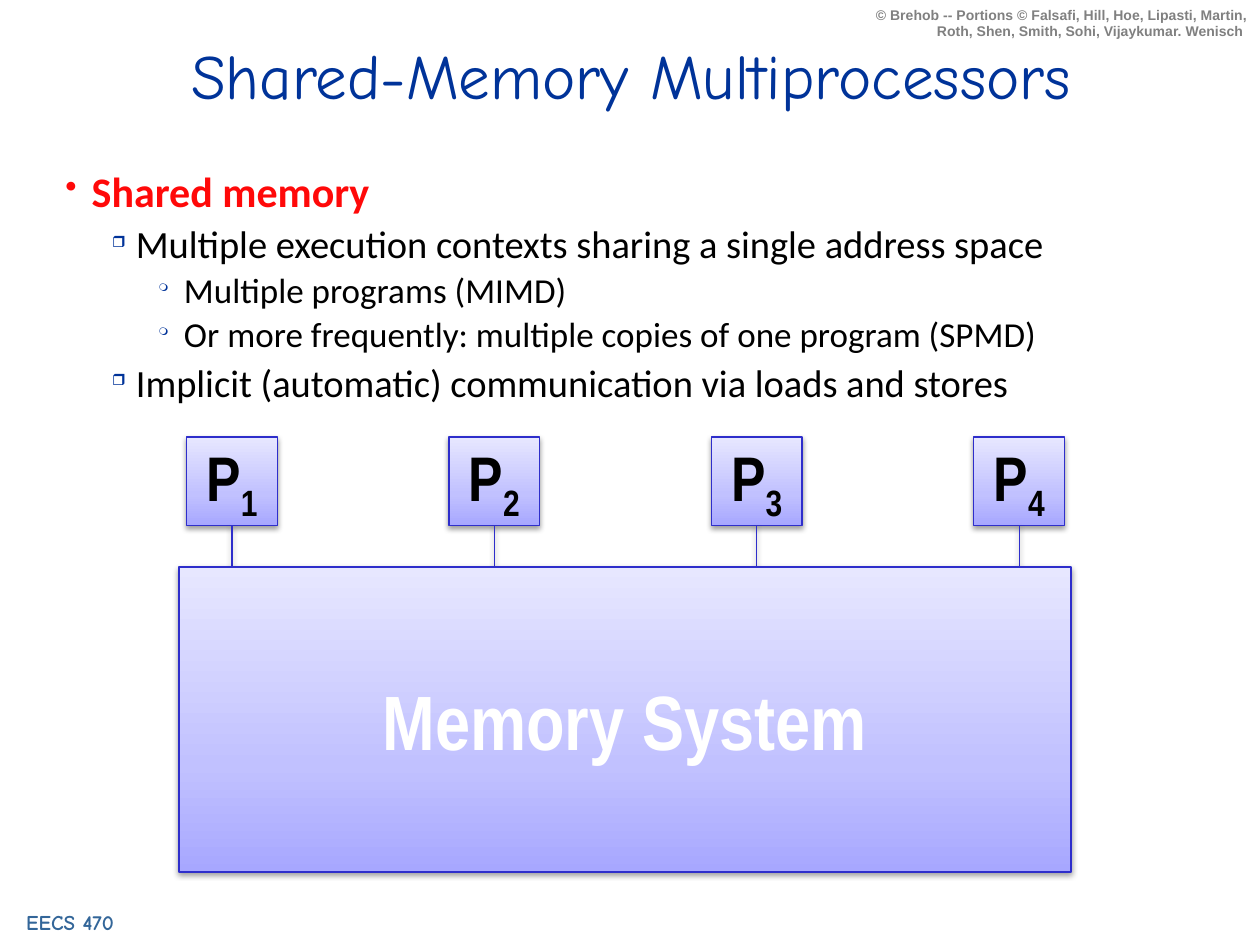
from lxml.etree import SubElement
from pptx import Presentation
from pptx.dml.color import RGBColor
from pptx.enum.shapes import MSO_CONNECTOR, MSO_SHAPE
from pptx.enum.text import MSO_ANCHOR, PP_ALIGN
from pptx.oxml.ns import qn
from pptx.util import Cm, Pt

# Content
TITLE = "Shared-Memory Multiprocessors"
COURSE = "EECS 470 "
CREDIT = ("© Brehob -- Portions © Falsafi, Hill, Hoe, Lipasti, Martin, "
          "Roth, Shen, Smith, Sohi, Vijaykumar. Wenisch ")
POINTS = [
    (0, "Shared memory"),
    (1, "Multiple execution contexts sharing a single address space"),
    (2, "Multiple programs (MIMD)"),
    (2, "Or more frequently: multiple copies of one program (SPMD)"),
    (1, "Implicit (automatic) communication via loads and stores"),
]
PROCESSORS = ["1", "2", "3", "4"]
MEMORY = "Memory System"

COLORS = {
    "title": "003399", "course": "336699", "credit": "808080",
    "topic": "FF0909", "text": "000000", "bullet": "003399",
    "edge": "2E2ECB", "shadow": "000000", "memory": "FFFFFF",
}
GRADIENT = [(0, "A7A7FF"), (35, "C1C1FF"), (100, "E7E7FF")]

# One entry per outline level; indents in cm, the rest in points or percent
LEVELS = [
    dict(size=24, before=15, left=0.53, hang=0.53, bullet="•", scale=80,
         color="topic", bullet_color="topic", bold=True),
    dict(size=22, before=7, left=1.42, hang=0.48, bullet="❒", scale=40,
         color="text", bullet_color="bullet", bold=False),
    dict(size=20, before=5, left=2.39, hang=0.51, bullet="❍", scale=30,
         color="text", bullet_color="bullet", bold=False),
]

# Diagram layout in cm
PROC_LEFT, PROC_TOP, PROC_W, PROC_H, PROC_PITCH = 3.76, 8.81, 1.83, 1.78, 5.29
MEM_LEFT, MEM_TOP, MEM_W, MEM_H = 3.61, 11.43, 17.98, 6.15

prs = Presentation()
prs.slide_width, prs.slide_height = Cm(25.4), Cm(19.05)
slide = prs.slides.add_slide(prs.slide_layouts[6])
shapes = slide.shapes


def set_font(paragraph, name, size, color, bold=False):
    font = paragraph.font
    font.name, font.size, font.bold = name, Pt(size), bold
    font.color.rgb = RGBColor.from_string(COLORS[color])


def add_label(box, text, align, name, size, color, bold=False):
    frame = shapes.add_textbox(*map(Cm, box)).text_frame
    frame.word_wrap = True
    paragraph = frame.paragraphs[0]
    paragraph.text, paragraph.alignment = text, align
    set_font(paragraph, name, size, color, bold)
    return frame


def add_color(parent, color, alpha=None):
    node = SubElement(parent, qn("a:srgbClr"), val=color)
    if alpha:
        SubElement(node, qn("a:alpha"), val=str(alpha * 1000))


def add_shadow(effects):
    shadow = SubElement(effects, qn("a:outerShdw"), blurRad="40000",
                        dist="20000", dir="5400000", rotWithShape="0")
    add_color(shadow, COLORS["shadow"], 38)


def set_edge(line):
    line.color.rgb = RGBColor.from_string(COLORS["edge"])
    line.width = Pt(0.75)


def add_block(left, top, width, height):
    block = shapes.add_shape(MSO_SHAPE.RECTANGLE, *map(Cm, (left, top, width, height)))
    block.fill.gradient()
    block.fill.gradient_angle = 90
    stops = block._element.spPr.find(qn("a:gradFill")).find(qn("a:gsLst"))
    stops.clear()
    for position, color in GRADIENT:
        add_color(SubElement(stops, qn("a:gs"), pos=str(position * 1000)), color)
    set_edge(block.line)
    block.shadow.inherit = False
    add_shadow(block._element.spPr.find(qn("a:effectLst")))
    block.text_frame.vertical_anchor = MSO_ANCHOR.MIDDLE
    paragraph = block.text_frame.paragraphs[0]
    paragraph.alignment = PP_ALIGN.CENTER
    return block, paragraph


# Footer, credit and title
add_label((-0.2, 18.21, 3.38, 0.76), COURSE, PP_ALIGN.CENTER,
          "Comic Neue", 12, "course", True)
add_label((17.35, 0, 8.05, 0.94), CREDIT, PP_ALIGN.RIGHT,
          "Arial", 8, "credit", True)
title = add_label((0.97, 0.64, 23.5, 1.7), TITLE, PP_ALIGN.CENTER,
                  "Comic Neue", 36, "title")
title.vertical_anchor = MSO_ANCHOR.MIDDLE

# Processors, each with a link down to the memory
for index, number in enumerate(PROCESSORS):
    processor, paragraph = add_block(PROC_LEFT + index * PROC_PITCH, PROC_TOP,
                                     PROC_W, PROC_H)
    processor.text_frame.word_wrap = False
    paragraph.add_run().text = "P"
    subscript = paragraph.add_run()
    subscript.text = number
    subscript._r.get_or_add_rPr().set("baseline", "-25000")
    set_font(paragraph, "Arial Narrow", 36, "text", True)

    center = processor.left + processor.width // 2
    link = shapes.add_connector(MSO_CONNECTOR.STRAIGHT, center,
                                Cm(PROC_TOP + PROC_H), center, Cm(MEM_TOP))
    link.begin_connect(processor, 2)
    set_edge(link.line)
    add_shadow(SubElement(link._element.spPr, qn("a:effectLst")))

# Memory
memory, paragraph = add_block(MEM_LEFT, MEM_TOP, MEM_W, MEM_H)
memory.text_frame.word_wrap = True
paragraph.text = MEMORY
set_font(paragraph, "Arial Narrow", 44, "memory", True)

# Outline
outline = shapes.add_textbox(Cm(1.07), Cm(3.38), Cm(23.7), Cm(2.54)).text_frame
outline.word_wrap = True
for index, (depth, text) in enumerate(POINTS):
    level = LEVELS[depth]
    paragraph = outline.add_paragraph() if index else outline.paragraphs[0]
    paragraph.text, paragraph.level = text, depth
    props = paragraph._p.get_or_add_pPr()
    props.set("marL", str(Cm(level["left"])))
    props.set("indent", str(-Cm(level["hang"])))
    add_color(SubElement(props, qn("a:buClr")), COLORS[level["bullet_color"]])
    SubElement(props, qn("a:buSzPct"), val=str(level["scale"] * 1000))
    SubElement(props, qn("a:buChar"), char=level["bullet"])
    paragraph.line_spacing = Pt(level["size"])
    paragraph.space_before = Pt(level["before"])
    set_font(paragraph, "Calibri", level["size"], level["color"], level["bold"])

prs.save("out.pptx")
